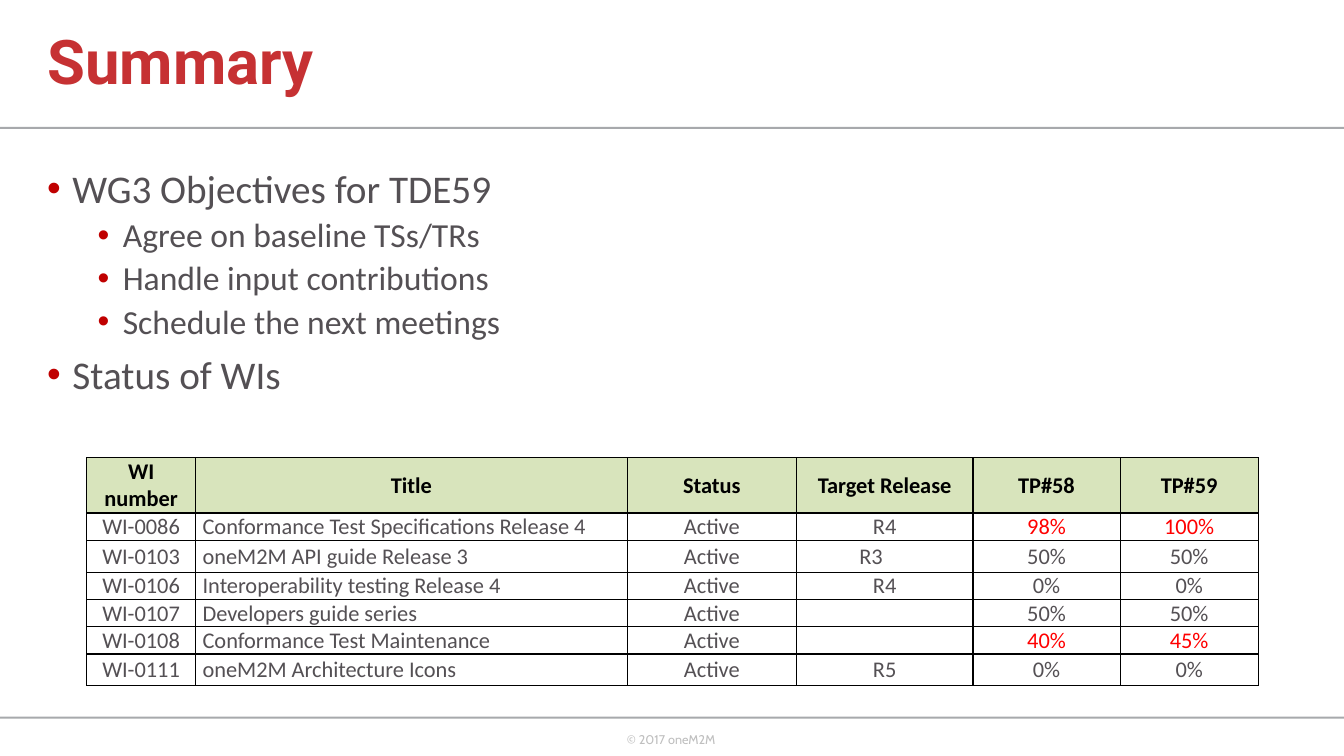
from lxml import etree
from pptx import Presentation
from pptx.dml.color import RGBColor
from pptx.enum.shapes import MSO_SHAPE
from pptx.enum.text import MSO_ANCHOR, PP_ALIGN
from pptx.oxml.ns import qn
from pptx.util import Inches, Pt

LEFT, CENTER = PP_ALIGN.LEFT, PP_ALIGN.CENTER
MIDDLE = MSO_ANCHOR.MIDDLE
RECTANGLE = MSO_SHAPE.RECTANGLE

COLORS = {
    "title": "C63133", "text": "545054", "bullet": "C00000", "rule": "A7A9AC",
    "footer": "BFBFBF", "header": "D8E4BC", "white": "FFFFFF",
    "black": "000000", "changed": "FF0000",
}


def rgb(name):
    return RGBColor.from_string(COLORS[name])


def write(paragraph, text, size, color="text", font="Calibri", bold=False,
          align=LEFT, line_spacing=None, before=0):
    paragraph.alignment = align
    paragraph.space_before = Pt(before)
    if line_spacing:
        paragraph.line_spacing = line_spacing
    if not text:
        etree.SubElement(paragraph._p, qn("a:endParaRPr"), sz=str(size * 100))
        return
    run = paragraph.add_run()
    run.text = text
    run.font.size = Pt(size)
    run.font.name = font
    run.font.bold = bold
    run.font.color.rgb = rgb(color)


def add_bullet(paragraph, left, hanging):
    properties = paragraph._p.get_or_add_pPr()
    properties.set("marL", str(Inches(left)))
    properties.set("indent", str(-Inches(hanging)))
    bullet_color = etree.SubElement(properties, qn("a:buClr"))
    etree.SubElement(bullet_color, qn("a:srgbClr"), val=COLORS["bullet"])
    etree.SubElement(properties, qn("a:buFont"), typeface="Arial")
    etree.SubElement(properties, qn("a:buChar"), char="•")


def add_borders(cell):
    properties = cell._tc.get_or_add_tcPr()
    for side in ("a:lnL", "a:lnR", "a:lnT", "a:lnB"):
        line = etree.SubElement(properties, qn(side), w=str(Pt(1)))
        fill = etree.SubElement(line, qn("a:solidFill"))
        etree.SubElement(fill, qn("a:srgbClr"), val=COLORS["black"])


class SummarySlide:
    def __init__(self, presentation):
        self.slide = presentation.slides.add_slide(presentation.slide_layouts[5])
        self.shapes = self.slide.shapes

    def rule(self, top):
        bar = self.shapes.add_shape(RECTANGLE, 0, Inches(top), Inches(13.33), Inches(0.02))
        bar.shadow.inherit = False
        bar.fill.solid()
        bar.fill.fore_color.rgb = rgb("rule")
        bar.line.fill.background()

    def title(self, text, left, top, width, height):
        heading = self.shapes.title
        heading.left, heading.top = Inches(left), Inches(top)
        heading.width, heading.height = Inches(width), Inches(height)
        heading.text_frame.vertical_anchor = MIDDLE
        write(heading.text_frame.paragraphs[0], text, 44, color="title",
              font="Roboto", bold=True, line_spacing=0.9)

    def text_frame(self, left, top, width, height, wrap=True):
        box = self.shapes.add_textbox(Inches(left), Inches(top), Inches(width), Inches(height))
        box.text_frame.word_wrap = wrap
        return box.text_frame

    def footer(self, text, *place):
        frame = self.text_frame(*place, wrap=False)
        write(frame.paragraphs[0], text, 9, color="footer", font="Cabin")

    def bullets(self, items, *place):
        frame = self.text_frame(*place)
        for index, (level, text) in enumerate(items):
            paragraph = frame.add_paragraph() if index else frame.paragraphs[0]
            paragraph.level = level
            add_bullet(paragraph, 0.25 + 0.5 * level, 0.25)
            before = (10, 5)[level] if index else 0
            write(paragraph, text, (28, 24)[level], line_spacing=0.9, before=before)

    def table(self, rows, widths, heights, left, top, changed_items):
        table = self.shapes.add_table(
            len(rows), len(widths), Inches(left), Inches(top),
            Inches(sum(widths)), Inches(sum(heights))).table
        for column, width in zip(table.columns, widths):
            column.width = Inches(width)
        for r, (values, height) in enumerate(zip(rows, heights)):
            table.rows[r].height = Inches(height)
            for c, text in enumerate(values):
                cell = table.cell(r, c)
                cell.vertical_anchor = MIDDLE
                cell.margin_left = cell.margin_right = Inches(0.07)
                cell.margin_top = cell.margin_bottom = 0
                add_borders(cell)
                cell.fill.solid()
                cell.fill.fore_color.rgb = rgb("white" if r else "header")
                color = "text" if r else "black"
                if c >= 4 and values[0] in changed_items:
                    color = "changed"
                write(cell.text_frame.paragraphs[0], text, 16, color=color,
                      bold=r == 0, align=LEFT if r and c == 1 else CENTER)
        return table


OBJECTIVES = [
    (0, "WG3 Objectives for TDE59"),
    (1, "Agree on baseline TSs/TRs"),
    (1, "Handle input contributions"),
    (1, "Schedule the next meetings"),
    (0, "Status of WIs"),
]
WORK_ITEMS = [
    ("WI number", "Title", "Status", "Target Release", "TP#58", "TP#59"),
    ("WI-0086", "Conformance Test Specifications Release 4", "Active", "R4", "98%", "100%"),
    ("WI-0103", "oneM2M API guide Release 3", "Active", "R3", "50%", "50%"),
    ("WI-0106", "Interoperability testing Release 4", "Active", "R4", "0%", "0%"),
    ("WI-0107", "Developers guide series", "Active", "", "50%", "50%"),
    ("WI-0108", "Conformance Test Maintenance", "Active", "", "40%", "45%"),
    ("WI-0111", "oneM2M Architecture Icons", "Active", "R5", "0%", "0%"),
]
COLUMN_WIDTHS = [1.08, 4.28, 1.68, 1.75, 1.46, 1.37]
ROW_HEIGHTS = [0.55, 0.27, 0.32, 0.27, 0.27, 0.27, 0.31]


def main():
    presentation = Presentation()
    presentation.slide_width, presentation.slide_height = Inches(13.33), Inches(7.5)
    summary = SummarySlide(presentation)
    for top in (1.26, 7.11):
        summary.rule(top)
    summary.footer("© 2017 oneM2M", 6.12, 7.21, 1.1, 0.4)
    summary.title("Summary", 0.37, 0, 11.28, 1.28)
    summary.bullets(OBJECTIVES, 0.37, 1.63, 11.5, 4.76)
    status = summary.table(WORK_ITEMS, COLUMN_WIDTHS, ROW_HEIGHTS, 0.86, 4.54,
                           changed_items=("WI-0086", "WI-0108"))
    status.cell(2, 3).margin_right = Inches(0.34)
    presentation.save("out.pptx")


if __name__ == "__main__":
    main()
